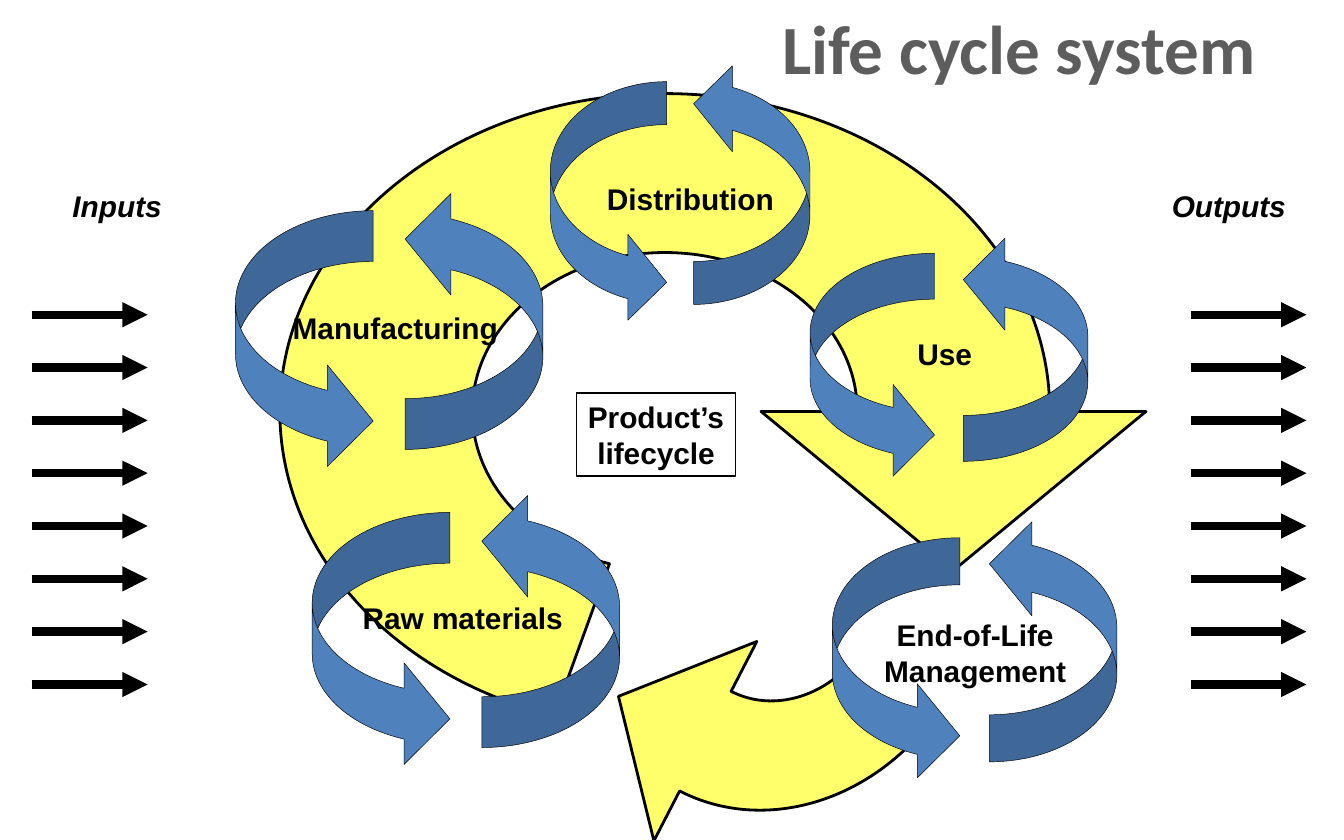
from dataclasses import dataclass
from math import cos, radians, sin, tan

from lxml.etree import SubElement
from pptx import Presentation
from pptx.dml.color import RGBColor as Color
from pptx.enum.shapes import MSO_CONNECTOR as Connector, MSO_SHAPE as Preset
from pptx.enum.text import MSO_ANCHOR as Anchor, MSO_AUTO_SIZE as AutoSize, PP_ALIGN as Align
from pptx.oxml.ns import qn
from pptx.util import Cm, Pt


@dataclass(frozen=True)
class Theme:
    ink: str = "000000"
    title_ink: str = "5D5D5D"
    track: str = "FFFF00"
    track_alpha: int = 58000
    arrow: str = "4F81BD"
    title_font: str = "Calibri"
    label_font: str = "Arial"
    title_size: float = 37
    label_size: float = 16
    hairline: float = 0.25
    frame_line: float = 0.75
    track_line: float = 1.5
    flow_line: float = 4.5


@dataclass(frozen=True)
class Box:
    left: float
    top: float
    width: float
    height: float

    def lengths(self):
        return Cm(self.left), Cm(self.top), Cm(self.width), Cm(self.height)

    def point(self, across, down):
        return self.left + across * self.width, self.top + down * self.height


THEME = Theme()


def paint_line(shape, width):
    shape.line.color.rgb = Color.from_string(THEME.ink)
    shape.line.width = Pt(width)


def paint_fill(shape, colour):
    shape.shadow.inherit = False
    shape.fill.solid()
    shape.fill.fore_color.rgb = Color.from_string(colour)


def write_lines(shape, lines, font, size, colour, italic=False):
    frame = shape.text_frame
    frame.word_wrap = False
    frame.auto_size = AutoSize.NONE
    frame.vertical_anchor = Anchor.MIDDLE
    frame.margin_left = frame.margin_right = Cm(0.2)
    frame.margin_top = frame.margin_bottom = Cm(0.1)
    para = frame.paragraphs[0]
    para.alignment = Align.CENTER
    for index, line in enumerate(lines):
        if index:
            para.add_line_break()
        span = para.add_run()
        span.text = line
        span.font.size = Pt(size)
        span.font.bold = True
        span.font.italic = italic
        span.font.color.rgb = Color.from_string(colour)
        span.font.name = font


def add_label(shapes, box, lines, italic=False):
    label = shapes.add_textbox(*box.lengths())
    write_lines(label, lines, THEME.label_font, THEME.label_size, THEME.ink, italic)


def place_title(page, box, text):
    title = page.shapes.title
    title.left, title.top, title.width, title.height = box.lengths()
    write_lines(title, [text], THEME.title_font, THEME.title_size, THEME.title_ink)


def place_track(page, box, tail, head, turn=0):
    def spot(angle, reach, ahead=0.0):
        ray_x, ray_y = cos(radians(angle)), sin(radians(angle))
        return (Cm(box.width / 2 * (1 + reach * ray_x - ahead * ray_y)),
                Cm(box.height / 2 * (1 + reach * ray_y + ahead * ray_x)))

    def arc(angles, reach):
        for start, end in zip(angles, angles[1:]):
            pull = reach * 4 / 3 * tan(radians(end - start) / 4)
            yield spot(start, reach, pull), spot(end, reach, -pull), spot(end, reach)

    corners = [tail, *(angle for angle in (180, 270) if tail < angle < head), head]
    arrowhead = [spot(head, 1.25), spot(head, 0.75, 0.5), spot(head, 0.25)]
    builder = page.shapes.build_freeform(*spot(head, 0.5), scale=1.0)
    builder.add_line_segments(arrowhead)
    track = builder.convert_to_shape()
    track.left, track.top, track.width, track.height = box.lengths()
    track.rotation = turn

    outline = track._element.spPr.find(".//" + qn("a:pathLst"))[0]
    outline.set("w", str(Cm(box.width)))
    outline.set("h", str(Cm(box.height)))
    for step in list(outline):
        outline.remove(step)

    def draw(kind, *points):
        step = SubElement(outline, qn("a:" + kind))
        for x, y in points:
            SubElement(step, qn("a:pt"), x=str(x), y=str(y))

    draw("moveTo", spot(head, 0.5))
    for curve in arc(corners[::-1], 0.5):
        draw("cubicBezTo", *curve)
    draw("lnTo", spot(tail, 1))
    for curve in arc(corners, 1):
        draw("cubicBezTo", *curve)
    for point in arrowhead:
        draw("lnTo", point)
    draw("lnTo", spot(head, 0.5))
    draw("close")

    paint_fill(track, THEME.track)
    paint_line(track, THEME.track_line)
    tint = track._element.spPr.find(qn("a:solidFill")).find(qn("a:srgbClr"))
    SubElement(tint, qn("a:alpha"), val=str(THEME.track_alpha))


def place_flow(page, box, text, label_width, label_shift, count=8):
    label_height, first = 0.9, 2.52
    pitch = (box.height - first) / (count - 1)
    for index in range(count):
        height = Cm(box.top + first + index * pitch)
        arrow = page.shapes.add_connector(Connector.STRAIGHT, Cm(box.left), height,
                                          Cm(box.left + box.width), height)
        paint_line(arrow, THEME.flow_line)
        SubElement(arrow._element.spPr.find(qn("a:ln")), qn("a:tailEnd"), type="triangle")
        SubElement(arrow._element.spPr, qn("a:effectLst"))
    left = box.left + (box.width - label_width) / 2 + label_shift
    add_label(page.shapes, Box(left, box.top, label_width, label_height), [text], italic=True)


def place_stage(page, box, lines, label_width, across, down):
    group = page.shapes.add_group_shape()
    width, height = 0.448 * box.width, 0.921 * box.height
    left_half = Box(box.left, box.top + box.height - height, width, height)
    right_half = Box(box.left + box.width - width, box.top, width, height)
    for half in (left_half, right_half):
        arrow = group.shapes.add_shape(Preset.CURVED_RIGHT_ARROW, *half.lengths())
        for index, value in enumerate((0.369, 0.738, 0.333)):
            arrow.adjustments[index] = value
        paint_fill(arrow, THEME.arrow)
        paint_line(arrow, THEME.hairline)
        if half is right_half:
            frame = arrow._element.spPr.find(qn("a:xfrm"))
            frame.set("flipH", "1")
            frame.set("flipV", "1")
    label_height = 0.25 + 0.69 * len(lines)
    x, y = box.point(across, down)
    label_box = Box(x - label_width / 2, y - label_height / 2, label_width, label_height)
    add_label(group.shapes, label_box, lines)


def place_core(page, box, lines):
    core = page.shapes.add_shape(Preset.RECTANGLE, *box.lengths())
    core.shadow.inherit = False
    core.fill.background()
    paint_line(core, THEME.frame_line)
    write_lines(core, lines, THEME.label_font, THEME.label_size, THEME.ink)


def main():
    deck = Presentation()
    deck.slide_width, deck.slide_height = Cm(25.4), Cm(15.88)
    page = deck.slides.add_slide(deck.slide_layouts[5])
    place_title(page, Box(14.53, 0, 9.45, 1.78), "Life cycle system")
    place_track(page, Box(5.29, 1.77, 14.55, 12.02), tail=106.7, head=360)
    place_track(page, Box(10.55, 7.49, 8.48, 7.39), tail=111.8, head=180, turn=297.3)
    place_flow(page, Box(0.6, 3.43, 2.19, 9.51), "Inputs", 2.11, 0.52)
    place_flow(page, Box(22.5, 3.43, 2.19, 9.51), "Outputs", 2.59, -0.37)
    place_core(page, Box(10.9, 7.43, 3, 1.57), ["Product’s", "lifecycle"])
    stages = [
        (Box(4.45, 3.56, 5.81, 5.36), ["Manufacturing"], 4.45, 0.52, 0.49),
        (Box(10.4, 1.15, 4.91, 5), ["Distribution"], 3.71, 0.54, 0.52),
        (Box(15.31, 4.42, 5.25, 4.67), ["Use"], 1.55, 0.485, 0.485),
        (Box(15.73, 9.77, 5.38, 5.03), ["End-of-Life", "Management"], 3.99, 0.502, 0.51),
        (Box(5.9, 9.27, 5.81, 5.28), ["Raw materials"], 4.37, 0.49, 0.457),
    ]
    for stage in stages:
        place_stage(page, *stage)
    deck.save("out.pptx")


if __name__ == "__main__":
    main()
